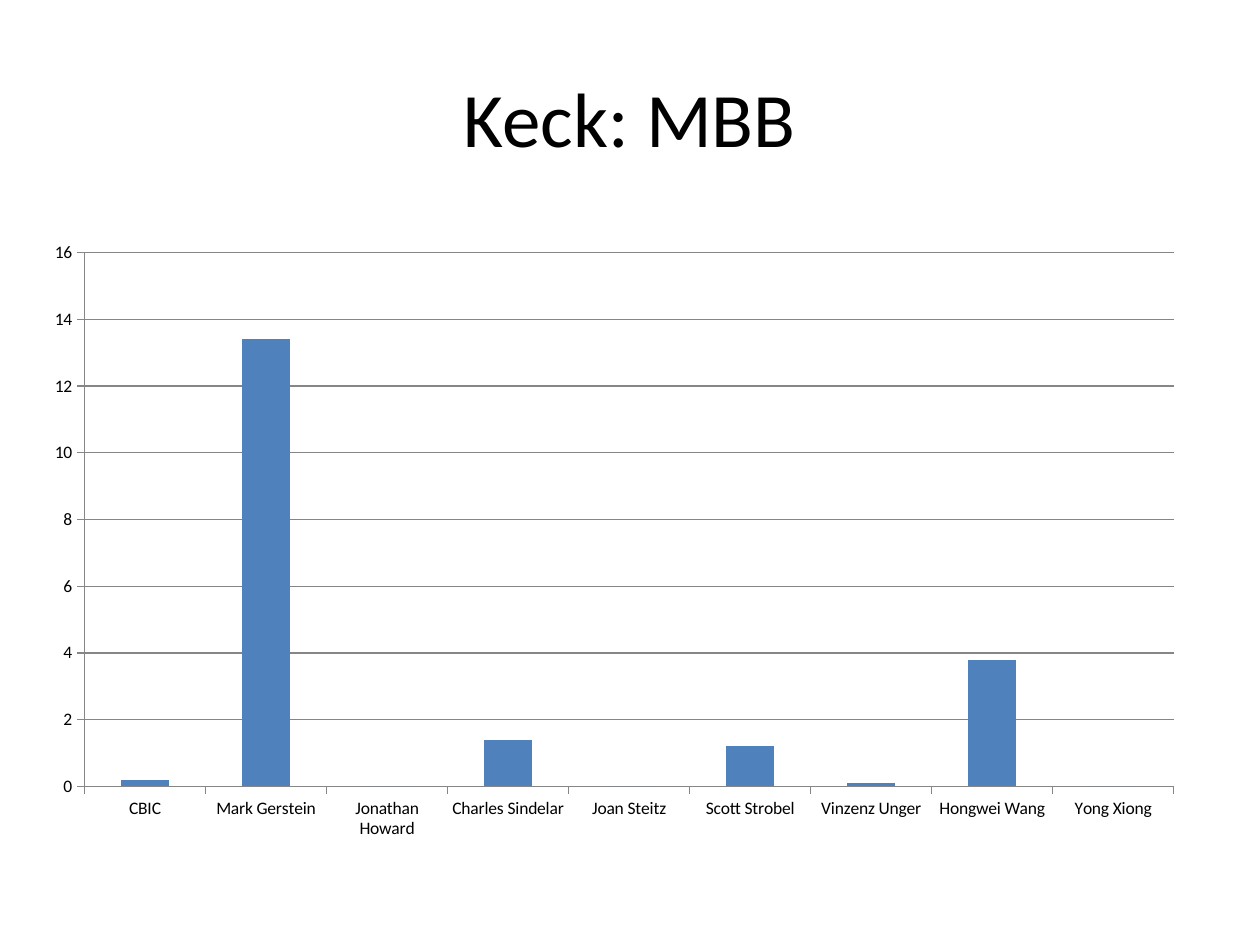
"""Build a slide with a title and a column chart of values per person."""
from pptx import Presentation
from pptx.chart.data import CategoryChartData
from pptx.dml.color import RGBColor
from pptx.enum.chart import XL_CHART_TYPE, XL_TICK_MARK
from pptx.enum.text import MSO_ANCHOR, PP_ALIGN
from pptx.util import Emu, Pt

PX = 9144
FONT = "Calibri"
BLACK = RGBColor(0x00, 0x00, 0x00)
BLUE = RGBColor(0x4F, 0x81, 0xBD)
GRAY = RGBColor(0x86, 0x86, 0x86)
VALUES = {
    "CBIC": 0.2,
    "Mark Gerstein": 13.4,
    "Jonathan Howard": 0,
    "Charles Sindelar": 1.4,
    "Joan Steitz": 0,
    "Scott Strobel": 1.2,
    "Vinzenz Unger": 0.1,
    "Hongwei Wang": 3.8,
    "Yong Xiong": 0,
}


def px(n):
    """Turn px (100 to the inch) into EMU."""
    return Emu(n * PX)


def style_font(font, size):
    """Set the shared typeface and colour at the given size."""
    font.name = FONT
    font.size = Pt(size)
    font.bold = False
    font.color.rgb = BLACK


def add_title(s, text, x, y, w, h):
    """Place a centred title in the box."""
    tf = s.shapes.add_textbox(px(x), px(y), px(w), px(h)).text_frame
    tf.word_wrap = True
    tf.vertical_anchor = MSO_ANCHOR.MIDDLE
    p = tf.paragraphs[0]
    p.alignment = PP_ALIGN.CENTER
    r = p.add_run()
    r.text = text
    style_font(r.font, 44)


def add_column_chart(s, values, x, y, w, h):
    """Place a one-series column chart in the box."""
    data = CategoryChartData()
    data.categories = list(values)
    data.add_series("Series 1", list(values.values()))
    chart = s.shapes.add_chart(
        XL_CHART_TYPE.COLUMN_CLUSTERED, px(x), px(y), px(w), px(h), data
    ).chart
    chart.has_legend = False
    chart.has_title = False
    style_font(chart.font, 10)

    plot = chart.plots[0]
    plot.gap_width = 150
    plot.vary_by_categories = False
    fill = plot.series[0].format.fill
    fill.solid()
    fill.fore_color.rgb = BLUE

    value_axis = chart.value_axis
    value_axis.minimum_scale = 0
    value_axis.maximum_scale = 16
    value_axis.major_unit = 2
    value_axis.has_major_gridlines = True
    lines = [value_axis.major_gridlines.format.line]
    for axis in (chart.category_axis, value_axis):
        axis.major_tick_mark = XL_TICK_MARK.OUTSIDE
        axis.minor_tick_mark = XL_TICK_MARK.NONE
        lines.append(axis.format.line)
    for line in lines:
        line.color.rgb = GRAY
        line.width = Pt(0.75)


def main():
    """Build and save the slide."""
    prs = Presentation()
    prs.slide_width, prs.slide_height = px(1000), px(750)
    s = prs.slides.add_slide(prs.slide_layouts[6])
    add_title(s, "Keck: MBB", 50, 30, 900, 125)
    add_column_chart(s, VALUES, 25, 183, 925, 492)
    prs.save("out.pptx")


if __name__ == "__main__":
    main()
